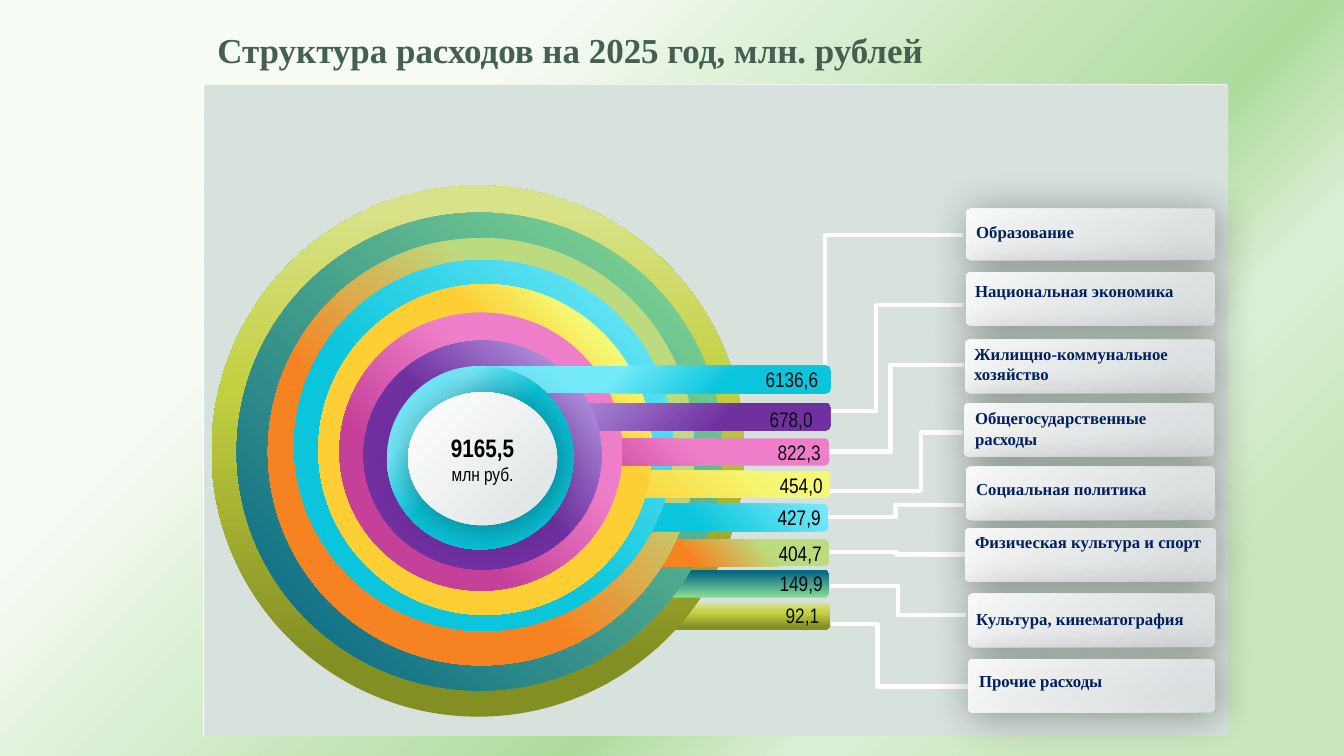
from lxml.etree import SubElement
from pptx import Presentation
from pptx.dml.color import RGBColor
from pptx.enum.dml import MSO_PATTERN
from pptx.enum.shapes import MSO_CONNECTOR, MSO_SHAPE
from pptx.enum.text import MSO_ANCHOR, PP_ALIGN
from pptx.oxml.ns import qn
from pptx.util import Pt

PX = 9144  # 100 px to the inch
INK = {
    "white": "FFFFFF", "grid": "D9D9D9", "panel": "D7E2DC", "title": "455F51",
    "label": "002060", "black": "000000", "dark": "0D0D0D", "silver": "DDE2E3",
    "mist": "F6FBF4", "leaf": "AEDC9D", "pale": "DBEFD4", "mint": "C9E8BE",
    "olive": "848F23", "lime": "C2D040", "straw": "D9E289",
    "green": "85DB93", "teal": "076785", "sage": "BBDB7E", "orange": "F78221",
    "sky": "73E9F9", "cyan": "0AC5DC", "lemon": "F5F874", "gold": "FDCF35",
    "pink": "EE7EC9", "rose": "C54199", "lilac": "AF8FDD", "violet": "7030A0",
}
SERIF, NARROW = "Times New Roman", "Arial Narrow"


class Board:
    def __init__(self, deck):
        self.slide = deck.slides.add_slide(deck.slide_layouts[6])
        self.shapes = self.slide.shapes

    def color(self, name):
        return RGBColor.from_string(INK[name])

    def blend(self, item, root, stops, angle, alpha=()):
        """Fill with a gradient; stops are (percent, colour)."""
        item.fill.solid()
        solid = root.find(".//" + qn("a:solidFill"))
        grad = solid.makeelement(qn("a:gradFill"), {"rotWithShape": "1"})
        solid.getparent().replace(solid, grad)
        steps = SubElement(grad, qn("a:gsLst"))
        for i, (pos, name) in enumerate(stops):
            stop = SubElement(steps, qn("a:gs"), pos=str(pos * 1000))
            tint = SubElement(stop, qn("a:srgbClr"), val=INK[name])
            if i < len(alpha):
                SubElement(tint, qn("a:alpha"), val=str(alpha[i] * 1000))
        SubElement(grad, qn("a:lin"), ang=str(angle * 60000), scaled="0")

    def shape(self, kind, box, stops=(), angle=0, alpha=()):
        item = self.shapes.add_shape(kind, *(n * PX for n in box))
        item.shadow.inherit = False
        item.line.fill.background()
        if stops:
            self.blend(item, item.element, stops, angle, alpha)
        return item

    def raised(self, kind, box, alpha=()):
        """A silver shape with a soft shadow."""
        item = self.shape(kind, box, [(0, "silver"), (100, "white")], 225, alpha)
        effects = item.element.spPr.find(qn("a:effectLst"))
        shade = SubElement(effects, qn("a:outerShdw"), blurRad=str(Pt(30)),
                           dist=str(Pt(3)), dir="2700000", algn="tl", rotWithShape="0")
        tint = SubElement(shade, qn("a:srgbClr"), val=INK["black"])
        SubElement(tint, qn("a:alpha"), val="40000")
        return item

    def link(self, start, bend, end):
        """An elbow line that turns at x = bend."""
        line = self.shapes.add_connector(
            MSO_CONNECTOR.ELBOW, *(n * PX for n in start + end))
        line.line.color.rgb = self.color("white")
        line.line.width = Pt(3)
        props = line.element.spPr
        SubElement(props, qn("a:effectLst"))
        ratio = round((bend - start[0]) / (end[0] - start[0]) * 100000)
        guides = props.find(qn("a:prstGeom")).get_or_add_avLst()
        SubElement(guides, qn("a:gd"), name="adj1", fmla=f"val {ratio}")

    def style(self, font, face, size, name, bold=False):
        font.name, font.size, font.bold = face, Pt(size), bold
        font.color.rgb = self.color(name)

    def text(self, words, box, face, size, name, bold=False):
        frame = self.shapes.add_textbox(*(n * PX for n in box)).text_frame
        frame.word_wrap = True
        para = frame.paragraphs[0]
        para.text = words
        self.style(para.font, face, size, name, bold)
        return frame


# bar box, bar stops, bar angle, ring box, ring stops, ring angle; inner to outer
OLIVE = [(11, "olive"), (62, "lime"), (96, "straw")]
GREEN = [(3, "green"), (95, "teal")]
ORANGE = [(29, "sage"), (62, "orange")]
RINGS = [
    ((469, 363, 355, 27), [(40, "sky"), (70, "cyan")], 45,
     (384, 363, 185, 182), [(25, "sky"), (48, "cyan")], 45),
    ((424, 400, 400, 27), [(32, "lilac"), (73, "violet")], 45,
     (361, 338, 236, 227), [(13, "lilac"), (50, "violet")], 135),
    ((424, 435, 399, 27), [(35, "pink"), (66, "rose")], 135,
     (337, 310, 281, 276), [(35, "pink"), (69, "rose")], 135),
    ((426, 467, 398, 27), [(16, "lemon"), (58, "gold")], 135,
     (316, 282, 331, 328), [(16, "lemon"), (31, "gold")], 135),
    ((596, 500, 226, 27), [(4, "sky"), (60, "cyan")], 135,
     (292, 258, 376, 368), [(4, "sky"), (58, "cyan")], 135),
    ((597, 535, 226, 27), ORANGE, 135, (266, 236, 424, 424), ORANGE, 135),
    ((557, 566, 266, 27), GREEN, 270, (235, 211, 482, 474), GREEN, 135),
    ((469, 598, 355, 27), OLIVE, 270, (210, 184, 529, 527), OLIVE, 270),
]

# name, label corner, card box, value, value corner, value colour, link
ROWS = [
    ("Образование", (959, 215), (959, 207, 247, 51),
     "6136,6", (750, 359), "dark", ((819, 385), 819, (956, 233))),
    ("Национальная экономика", (958, 274), (959, 270, 247, 53),
     "678,0", (754, 398), "dark", ((823, 408), 870, (956, 303))),
    ("Жилищно-коммунальное хозяйство", (957, 336), (958, 337, 248, 53),
     "822,3", (762, 431), "dark", ((810, 448), 884, (957, 362))),
    ("Общегосударственные расходы", (958, 400), (957, 400, 248, 53),
     "454,0", (764, 464), "black", ((822, 487), 914, (956, 429))),
    ("Социальная политика", (959, 470), (959, 463, 247, 53),
     "427,9", (762, 496), "black", ((822, 513), 889, (957, 501))),
    ("Физическая культура и спорт", (958, 523), (958, 524, 249, 53),
     "404,7", (763, 531), "black", ((822, 548), 890, (958, 550))),
    ("Культура, кинематография", (959, 599), (961, 589, 245, 53),
     "149,9", (764, 561), "dark", ((824, 581), 891, (959, 610))),
    ("Прочие расходы", (962, 660), (961, 654, 245, 53),
     "92,1", (770, 593), "dark", ((825, 619), 871, (961, 681))),
]


def main():
    deck = Presentation()
    deck.slide_width, deck.slide_height = 1334 * PX, 750 * PX
    board = Board(deck)

    # Background and panel
    board.blend(board.slide.background, board.slide.element,
                [(27, "mist"), (63, "leaf"), (74, "pale"), (86, "mint")], 45, (82,))
    grid = board.shape(MSO_SHAPE.RECTANGLE, (202, 84, 1015, 646))
    grid.fill.patterned()
    grid.fill.pattern = MSO_PATTERN.SMALL_GRID
    grid.fill.fore_color.rgb = board.color("grid")
    grid.fill.back_color.rgb = board.color("white")
    grid.line.color.rgb = board.color("white")
    grid.line.width = Pt(1)
    panel = board.shape(MSO_SHAPE.RECTANGLE, (203, 84, 1016, 646))
    panel.fill.solid()
    panel.fill.fore_color.rgb = board.color("panel")

    # Links
    for row in ROWS:
        board.link(*row[-1])

    # Bars and rings, outer ones first
    for bar, tones, turn, ring, stops, angle in reversed(RINGS):
        board.shape(MSO_SHAPE.ROUNDED_RECTANGLE, bar, tones, turn)
        board.shape(MSO_SHAPE.OVAL, ring, stops, angle)

    # Total in the centre
    core = board.raised(MSO_SHAPE.OVAL, (405, 389, 148, 132)).text_frame
    core.word_wrap = True
    core.vertical_anchor = MSO_ANCHOR.MIDDLE
    para = core.paragraphs[0]
    para.alignment = PP_ALIGN.CENTER
    for words, size, bold in (("9165,5 ", 18, True), ("млн руб.", 13.5, False)):
        run = para.add_run()
        run.text = words
        board.style(run.font, NARROW, size, "black", bold)

    # Cards, then labels and values
    for row in ROWS:
        card = board.raised(MSO_SHAPE.ROUNDED_RECTANGLE, row[2], (90, 90))
        card.adjustments[0] = 0.085
    for name, spot, _, value, place, tone, _ in ROWS:
        board.text(name, (*spot, 249, 31), SERIF, 12, "label", True)
        board.text(value, (*place, 85, 37), NARROW, 15, tone)

    # Title
    title = board.text("Структура расходов на 2025 год, млн. рублей",
                       (206, 25, 1128, 54), SERIF, 25, "title", True)
    title.vertical_anchor = MSO_ANCHOR.MIDDLE
    title.paragraphs[0].line_spacing = 0.9

    deck.save("out.pptx")


if __name__ == "__main__":
    main()
